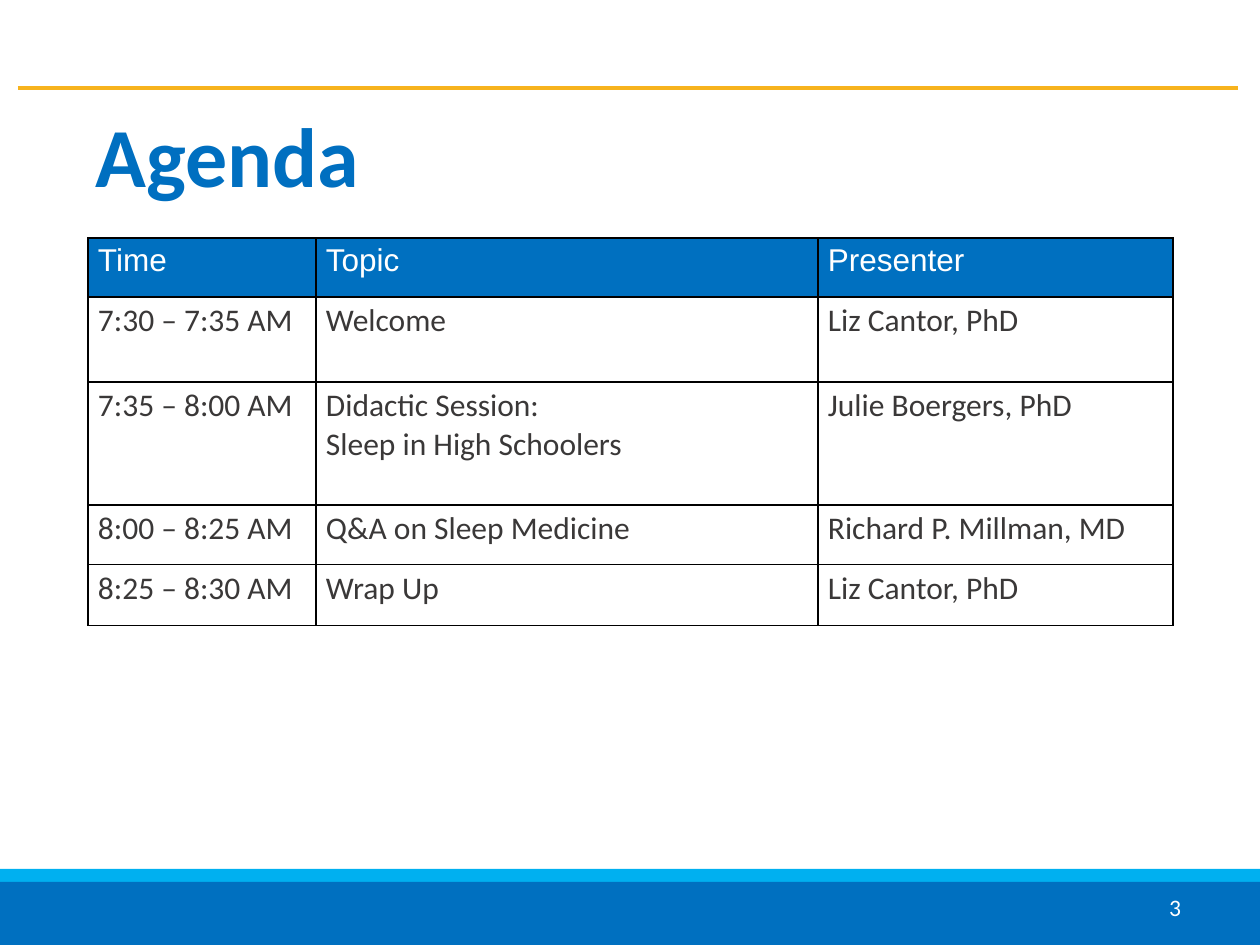
import pptx
import pptx.util
import pptx.dml.color
import pptx.enum.text
import pptx.enum.shapes
import pptx.oxml
import pptx.oxml.ns
from dataclasses import dataclass


@dataclass(frozen=True)
class Theme:
    blue: str = "0070C0"
    head: str = "006FC0"
    sky: str = "00B0F0"
    gold: str = "F7B31D"
    ink: str = "3A3838"
    white: str = "FFFFFF"
    black: str = "000000"
    title: float = 48
    body: float = 18
    page: float = 13.5
    sans: str = "Calibri"
    alt: str = "Arial"


def px(n):
    return pptx.util.Emu(round(n * 914400 / 126))


def style(para, face, size, color, bold=False):
    font = para.font
    font.name = face
    font.size = pptx.util.Pt(size)
    font.bold = bold
    font.color.rgb = pptx.dml.color.RGBColor.from_string(color)


theme = Theme()
align = pptx.enum.text.PP_ALIGN
anchor = pptx.enum.text.MSO_ANCHOR
color = pptx.dml.color.RGBColor.from_string

deck = pptx.Presentation()
deck.slide_width = px(1260)
deck.slide_height = px(945)
slide = deck.slides.add_slide(deck.slide_layouts[5])
shapes = slide.shapes

for top, high, fill in [(869, 76, theme.sky), (882, 63, theme.blue)]:
    band = shapes.add_shape(
        pptx.enum.shapes.MSO_SHAPE.RECTANGLE, 0, px(top), px(1260), px(high))
    band.shadow.inherit = False
    band.fill.solid()
    band.fill.fore_color.rgb = color(fill)
    band.line.fill.background()

rule = shapes.add_connector(
    pptx.enum.shapes.MSO_CONNECTOR.STRAIGHT, px(18), px(88), px(1238), px(88))
rule.line.color.rgb = color(theme.gold)
rule.line.width = pptx.util.Pt(2)
props = rule._element.spPr
props.append(pptx.oxml.parse_xml(
    f'<a:effectLst {pptx.oxml.ns.nsdecls("a")}/>'))

page = shapes.add_textbox(px(906), px(888), px(284), px(50))
title = shapes.title
title.left, title.top, title.width, title.height = (
    px(87), px(106), px(1087), px(108))

for box, text, side in [(page, "3", align.RIGHT), (title, "Agenda", align.LEFT)]:
    frame = box.text_frame
    frame.text = text
    frame.word_wrap = True
    frame.auto_size = pptx.enum.text.MSO_AUTO_SIZE.NONE
    frame.margin_left = frame.margin_right = px(9)
    frame.margin_top = frame.margin_bottom = px(5)
    frame.paragraphs[0].alignment = side

style(page.text_frame.paragraphs[0], theme.sans, theme.page, theme.white)
title.text_frame.vertical_anchor = anchor.MIDDLE
title.text_frame.paragraphs[0].line_spacing = 0.9
style(title.text_frame.paragraphs[0], theme.sans, theme.title, theme.head, True)

agenda = [
    ("Time", "Topic", "Presenter"),
    ("7:30 – 7:35 AM", "Welcome", "Liz Cantor, PhD"),
    ("7:35 – 8:00 AM", "Didactic Session:\nSleep in High Schoolers",
     "Julie Boergers, PhD"),
    ("8:00 – 8:25 AM", "Q&A on Sleep Medicine", "Richard P. Millman, MD"),
    ("8:25 – 8:30 AM", "Wrap Up", "Liz Cantor, PhD"),
]
wide = [228, 502, 355]
high = [59, 85, 123, 60, 61]
grid = shapes.add_table(
    len(high), len(wide), px(88), px(238), px(sum(wide)), px(sum(high))).table
grid.first_row = False
grid.horz_banding = False
for col, size in zip(grid.columns, wide):
    col.width = px(size)

for r, (row, size) in enumerate(zip(agenda, high)):
    grid.rows[r].height = px(size)
    for c, text in enumerate(row):
        cell = grid.cell(r, c)
        cell.text = text
        cell.margin_left = cell.margin_right = px(10)
        cell.margin_top = cell.margin_bottom = px(5)
        cell.vertical_anchor = anchor.TOP
        if r == 0:
            cell.fill.solid()
            cell.fill.fore_color.rgb = color(theme.blue)
            look = theme.alt, theme.body, theme.white
        else:
            cell.fill.background()
            look = theme.sans, theme.body, theme.ink
        for para in cell.text_frame.paragraphs:
            style(para, *look)
        props = cell._tc.get_or_add_tcPr()
        for spot, edge in enumerate(["lnL", "lnR", "lnT", "lnB"]):
            props.insert(spot, pptx.oxml.parse_xml(
                f'<a:{edge} {pptx.oxml.ns.nsdecls("a")} w="9525"><a:solidFill>'
                f'<a:srgbClr val="{theme.black}"/></a:solidFill></a:{edge}>'))

deck.save("out.pptx")
